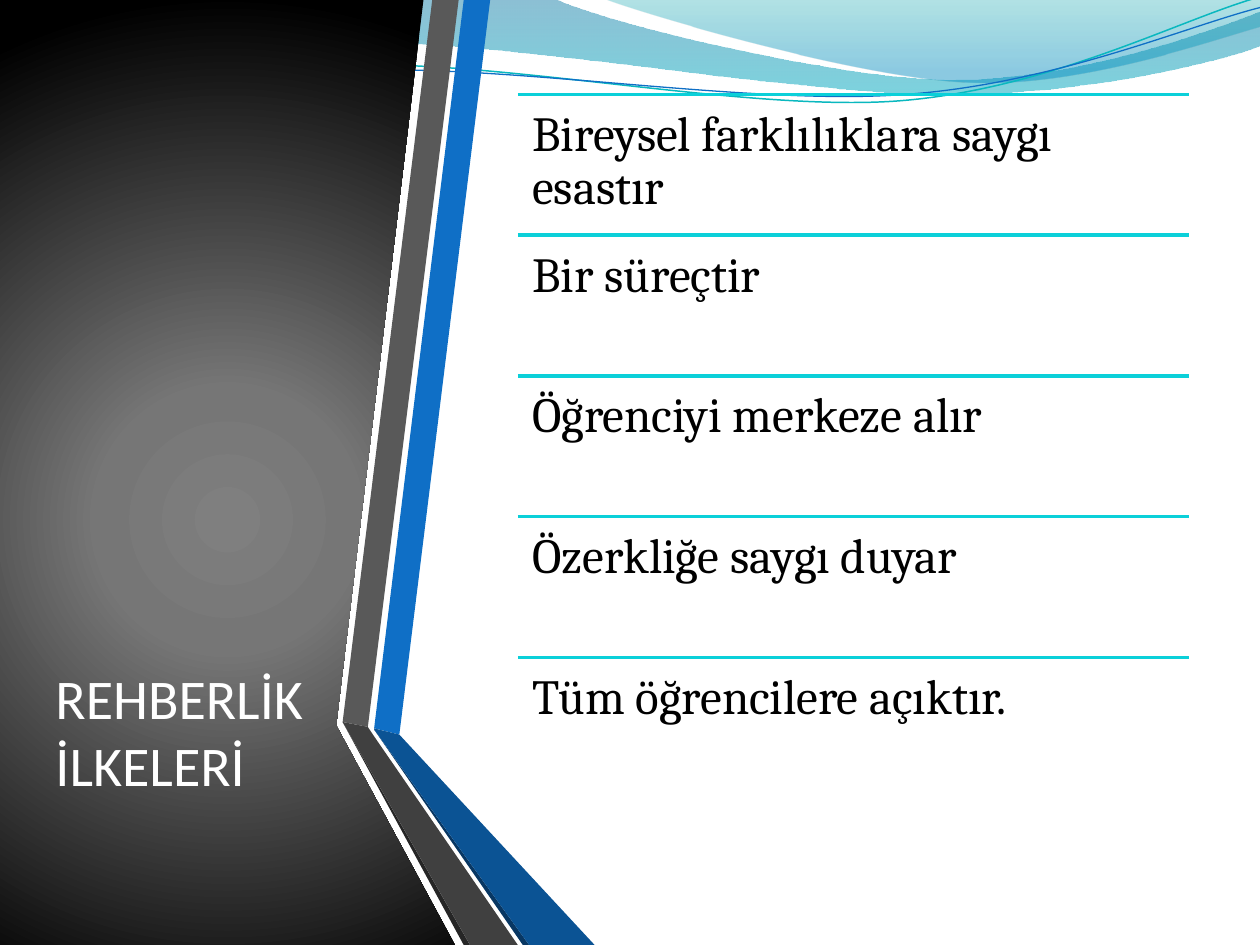
from lxml import etree
from pptx import Presentation
from pptx.dml.color import RGBColor
from pptx.enum.shapes import MSO_CONNECTOR
from pptx.enum.text import MSO_ANCHOR
from pptx.oxml import parse_xml
from pptx.oxml.ns import nsdecls, qn
from pptx.util import Pt

LINE = MSO_CONNECTOR.STRAIGHT
TOP, BOTTOM = MSO_ANCHOR.TOP, MSO_ANCHOR.BOTTOM
HEX = {
    "white": "FFFFFF", "black": "000000", "rule": "0BD0D9",
    "blue": "0F6FC6", "deep": "0B5394", "navy": "083763",
    "gray": "595959", "char": "404040", "soot": "262626",
    "teal": "0AB8BF", "sea": "0074A1", "aqua": "00C6CF",
    "mint": "00A1A9", "sky": "008BBF", "ash": "7F7F7F", "lead": "767676",
}
RGB = {name: RGBColor.from_string(code) for name, code in HEX.items()}
DOWN = '<a:lin ang="5400000" scaled="0"/>'
GLOW = ('<a:path path="circle"><a:fillToRect l="10000" t="110000" '
        'r="10000" b="100000"/></a:path>')

prs = Presentation()
prs.slide_width, prs.slide_height = Pt(720), Pt(540)
slide = prs.slides.add_slide(prs.slide_layouts[6])
shapes = slide.shapes


def outline(steps, close=True):
    """Add a freeform; a step of six numbers is a cubic curve, of two a line."""
    dots = [(Pt(step[i]), Pt(step[i + 1]))
            for step in steps for i in range(0, len(step), 2)]
    pen = shapes.build_freeform(*dots[0], scale=1.0)
    pen.add_line_segments(dots[1:], close=close)
    shape = pen.convert_to_shape()
    legs = iter(list(shape.element.spPr.iter(qn("a:lnTo"))))
    for step in steps[1:]:
        leg = next(legs)
        if len(step) == 6:
            leg.tag = qn("a:cubicBezTo")
            for _ in range(2):
                extra = next(legs)
                leg.append(extra[0])
                extra.getparent().remove(extra)
    shape.shadow.inherit = False
    shape.fill.background()
    shape.line.fill.background()
    return shape


def write(text, box, inset, anchor, size, font, color):
    frame = shapes.add_textbox(*map(Pt, box)).text_frame
    frame.word_wrap = True
    frame.vertical_anchor = anchor
    (frame.margin_left, frame.margin_top,
     frame.margin_right, frame.margin_bottom) = map(Pt, inset)
    para = frame.paragraphs[0]
    para.text = text
    para.font.size, para.font.name = Pt(size), font
    para.font.color.rgb = RGB[color]
    return para


# Gradient areas: stops are (position, colour, opacity) in percent
wave = [(0, 0), (316.8, -0.7), (342.7, 12.2, 478.1, 45.4, 545.8, 45.4),
        (614.2, 45.4, 689.8, 18.7, 720, 6.5), (720.7, 25.9),
        (707.8, 31.7, 626.4, 54.7, 537.1, 54),
        (447.8, 54, 275, 20.2, 185, 24.5), (92.9, 25.9, 33.1, 59.8, -0.7, 81.4)]
crest = [(344.9, -0.7), (366.5, 7.9, 491, 44.6, 553.7, 46.8),
         (616.3, 49.7, 691.9, 23, 720, 15.1), (720, 0)]
panel = [(0, 0), (242, 0), (192.2, 414), (192.2, 414.7), (260, 540), (0, 540)]
curls = [
    ("teal", 0.85, [(-1.4, 62.9), (33.8, 51.7, 114.1, 29.4, 199.8, 29.9),
                    (284.9, 30.3, 425.8, 67.3, 512.4, 64.9),
                    (599, 62.4, 676.4, 25.7, 720.2, 15.6)]),
    ("blue", 0.75, [(-1.1, 58), (32.9, 53.8, 118.3, 32.5, 204.1, 33),
                    (290.6, 33.4, 428.9, 63.8, 515.5, 61.4),
                    (601.4, 59.6, 678.4, 30.1, 721.4, 21.3)]),
]
areas = [
    (wave, [(0, "sea", 45), (100, "aqua", 55)], DOWN),
    (crest, [(0, "mint", 30), (80, "sky", 45)], DOWN),
    (panel, [(0, "ash", 100), (25, "lead", 100), (100, "black", 100)], GLOW),
]
for steps, stops, way in areas:
    if steps is panel:
        for color, width, curl in curls:
            shape = outline(curl, close=False)
            shape.rotation = 357.3
            shape.line.color.rgb, shape.line.width = RGB[color], Pt(width)
    props = outline(steps).element.spPr
    marks = "".join(
        f'<a:gs pos="{pos * 1000}"><a:srgbClr val="{HEX[color]}">'
        f'<a:alpha val="{alpha * 1000}"/></a:srgbClr></a:gs>'
        for pos, color, alpha in stops)
    props.replace(props.find(qn("a:noFill")), parse_xml(
        f'<a:gradFill {nsdecls("a")} rotWithShape="1">'
        f'<a:gsLst>{marks}</a:gsLst>{way}</a:gradFill>'))

# Folded ribbons
ribbons = [
    ("blue", [(213.8, 416.2), (228.2, 419.8), (280.1, 0), (265, 0)]),
    ("gray", [(262.1, 0), (247, 0), (195.8, 412.6), (210.2, 415.4)]),
    ("soot", [(195.8, 412.6), (265, 540), (268.6, 540)]),
    ("navy", [(213.8, 416.9), (298.8, 540), (302.4, 540)]),
    ("deep", [(213.8, 416.9), (302.4, 540), (339.8, 540), (228.2, 419.8),
              (213.8, 416.2)]),
    ("char", [(295.9, 540), (213.1, 419.8), (210.2, 415.4), (195.8, 412.6),
              (268.6, 540)]),
]
for color, steps in ribbons:
    fill = outline(steps).fill
    fill.solid()
    fill.fore_color.rgb = RGB[color]

write("REHBERLİK İLKELERİ", (31.7, 54, 164.2, 401.8), (0, 3.6, 0, 0),
      BOTTOM, 32, "Calibri", "white")

# Ruled list
items = ["Bireysel farklılıklara saygı esastır", "Bir süreçtir",
         "Öğrenciyi merkeze alır", "Özerkliğe saygı duyar",
         "Tüm öğrencilere açıktır."]
left, wide, high = 295.9, 383.4, 80.4
for row, item in enumerate(items):
    top = 54 + row * high
    rule = shapes.add_connector(LINE, Pt(left), Pt(top), Pt(left + wide), Pt(top))
    rule.line.color.rgb, rule.line.width = RGB["rule"], Pt(2)
    etree.SubElement(rule.element.spPr, qn("a:effectLst"))
    para = write(item, (left, top, wide, high), [8.4] * 4,
                 TOP, 28, "Cambria", "black")
    para.line_spacing = 0.9

prs.save("out.pptx")
